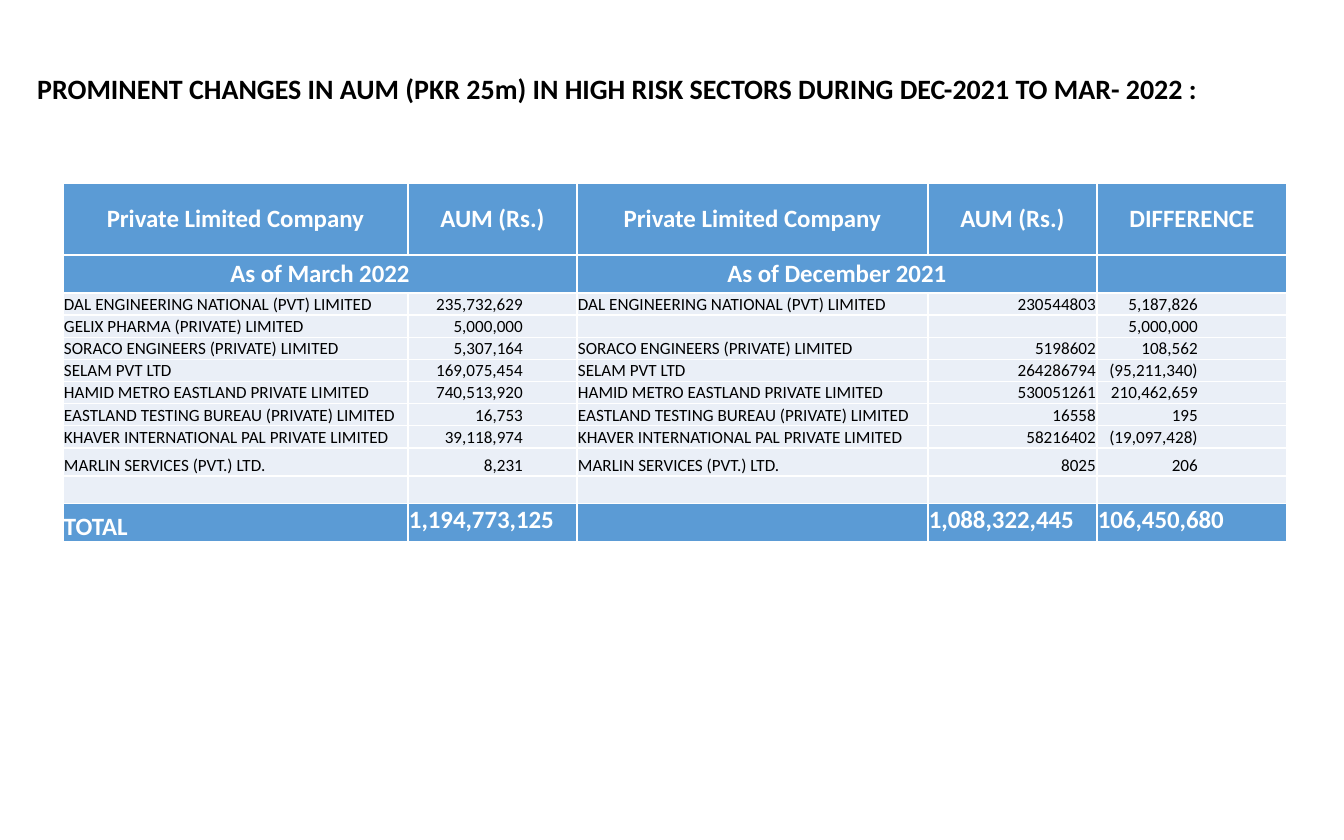
from lxml import etree
from pptx import Presentation
from pptx.dml.color import RGBColor
from pptx.enum.text import MSO_ANCHOR, PP_ALIGN
from pptx.oxml.ns import qn
from pptx.util import Pt

LEFT, CENTER, RIGHT = PP_ALIGN.LEFT, PP_ALIGN.CENTER, PP_ALIGN.RIGHT
TOP, MIDDLE, BOTTOM = MSO_ANCHOR.TOP, MSO_ANCHOR.MIDDLE, MSO_ANCHOR.BOTTOM
EMU_PER_PX = 914400 // 112
BLUE, PALE, WHITE, BLACK = "5B9BD5", "EAEFF7", "FFFFFF", "000000"
FONT = "Calibri"

COLUMNS = [345, 169, 351, 169, 190]
ROWS = [72, 38] + [22] * 7 + [28, 28, 38]
BODY_ALIGN = [LEFT, RIGHT, LEFT, RIGHT, RIGHT]
BODY_RIGHT_MARGIN = [1, 54, 1, 1, 89]

HEADER = ["Private Limited Company", "AUM (Rs.)"] * 2 + ["DIFFERENCE"]
PERIODS = ["As of March 2022", "", "As of December 2021", "", ""]
HOLDINGS = [
    ("DAL ENGINEERING NATIONAL (PVT) LIMITED", "235,732,629", "230544803", "5,187,826"),
    ("GELIX PHARMA (PRIVATE) LIMITED", "5,000,000", "", "5,000,000"),
    ("SORACO ENGINEERS (PRIVATE) LIMITED", "5,307,164", "5198602", "108,562"),
    ("SELAM PVT LTD", "169,075,454", "264286794", "(95,211,340)"),
    ("HAMID METRO EASTLAND PRIVATE LIMITED", "740,513,920", "530051261", "210,462,659"),
    ("EASTLAND TESTING BUREAU (PRIVATE) LIMITED", "16,753", "16558", "195"),
    ("KHAVER INTERNATIONAL PAL PRIVATE LIMITED", "39,118,974", "58216402", "(19,097,428)"),
    ("MARLIN SERVICES (PVT.) LTD.", "8,231", "8025", "206"),
]
TOTALS = ["TOTAL", "1,194,773,125", "", "1,088,322,445", "106,450,680"]


def px(n):
    """Turn pixels into EMU."""
    return n * EMU_PER_PX


def rgb(value):
    """Turn a hex string into a colour."""
    return RGBColor.from_string(value)


def style(p, size, color, bold, align):
    """Format a whole paragraph."""
    p.alignment = align
    p.font.name, p.font.size, p.font.bold = FONT, Pt(size), bold
    p.font.color.rgb = rgb(color)


def add_borders(cell):
    """Draw thin white lines on all four sides of a cell."""
    tcPr = cell._tc.get_or_add_tcPr()
    for i, side in enumerate(("a:lnL", "a:lnR", "a:lnT", "a:lnB")):
        ln = etree.Element(qn(side), w=str(Pt(1)))
        fill = etree.SubElement(ln, qn("a:solidFill"))
        etree.SubElement(fill, qn("a:srgbClr"), val=WHITE)
        tcPr.insert(i, ln)


def fill_cell(cell, text, fill, size, color, bold, align, anchor, right=1):
    """Write and format one table cell."""
    cell.fill.solid()
    cell.fill.fore_color.rgb = rgb(fill)
    cell.margin_left = cell.margin_top = px(1)
    cell.margin_right, cell.margin_bottom = px(right), 0
    cell.vertical_anchor = anchor
    cell.text = text
    p = cell.text_frame.paragraphs[0]
    style(p, size, color, bold, align)
    if not text:
        p._p.get_or_add_endParaRPr().set("sz", str(size * 100))
    add_borders(cell)


def add_title(s, x, y, w, h):
    """Place the slide title in its box."""
    sp = s.shapes.title
    sp.left, sp.top, sp.width, sp.height = px(x), px(y), px(w), px(h)
    tf = sp.text_frame
    tf.text = ("PROMINENT CHANGES IN AUM (PKR 25m) IN HIGH RISK SECTORS "
               "DURING DEC-2021 TO MAR- 2022 :")
    tf.vertical_anchor = MIDDLE
    p = tf.paragraphs[0]
    p.line_spacing = 0.9
    style(p, 18, BLACK, True, LEFT)


def add_holdings_table(s, x, y):
    """Build the comparison table from its top left corner."""
    table = s.shapes.add_table(len(ROWS), len(COLUMNS), px(x), px(y),
                               px(sum(COLUMNS)), px(sum(ROWS))).table
    table.first_row = table.horz_banding = False
    for column, width in zip(table.columns, COLUMNS):
        column.width = px(width)
    for row, height in zip(table.rows, ROWS):
        row.height = px(height)

    for r, texts in enumerate([HEADER, PERIODS]):
        for c, text in enumerate(texts):
            fill_cell(table.cell(r, c), text, BLUE, 16, WHITE, True, CENTER, MIDDLE)
    for c in (0, 2):
        table.cell(1, c).merge(table.cell(1, c + 1))

    body = [(name, march, name if december else "", december, change)
            for name, march, december, change in HOLDINGS] + [[""] * len(COLUMNS)]
    for r, texts in enumerate(body, 2):
        for c, text in enumerate(texts):
            fill_cell(table.cell(r, c), text, PALE, 11, BLACK, False,
                      BODY_ALIGN[c], BOTTOM, BODY_RIGHT_MARGIN[c])

    for c, text in enumerate(TOTALS):
        fill_cell(table.cell(len(ROWS) - 1, c), text, BLUE, 16, WHITE, True,
                  LEFT, TOP if c else BOTTOM)


def main():
    """Build and save the slide."""
    prs = Presentation()
    prs.slide_width, prs.slide_height = px(1344), px(840)
    s = prs.slides.add_slide(prs.slide_layouts[5])
    add_title(s, 26, 15, 1204, 150)
    add_holdings_table(s, 63, 183)
    prs.save("out.pptx")


if __name__ == "__main__":
    main()
